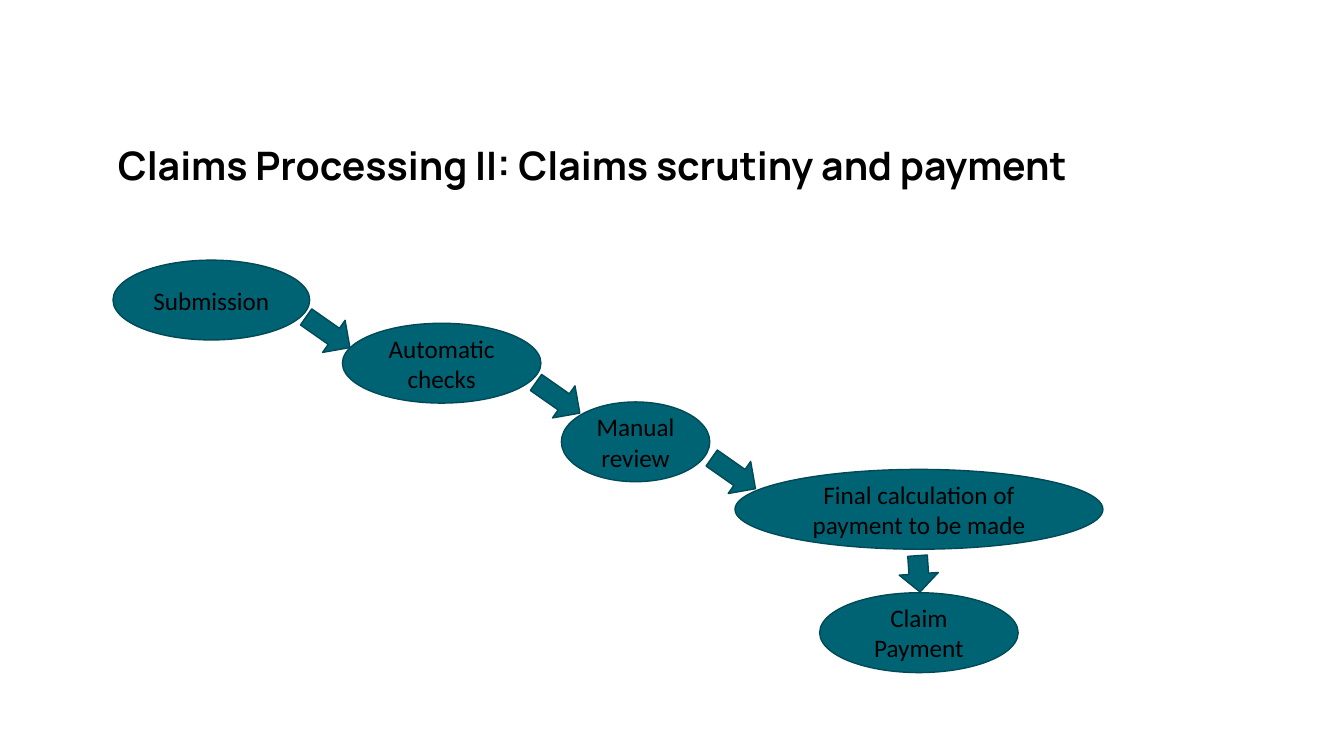
from dataclasses import dataclass

from pptx import Presentation
from pptx.dml.color import RGBColor as Rgb
from pptx.enum.shapes import MSO_SHAPE as Kind
from pptx.enum.text import MSO_ANCHOR as Anchor, MSO_AUTO_SIZE as Fit, PP_ALIGN as Align
from pptx.util import Pt


@dataclass(frozen=True)
class Theme:
    teal: Rgb = Rgb(0x00, 0x63, 0x74)
    edge: Rgb = Rgb(0x00, 0x49, 0x56)
    ink: Rgb = Rgb(0, 0, 0)
    head: int = 28
    body: int = 18


theme = Theme()
head_font = {"name": "Manrope", "size": Pt(theme.head), "bold": True}
body_font = {"name": "Calibri", "size": Pt(theme.body), "bold": False}


def write(shape, text, font, align, anchor):
    frame = shape.text_frame
    frame.text = text
    frame.word_wrap = True
    frame.auto_size = Fit.NONE
    frame.vertical_anchor = anchor
    para = frame.paragraphs[0]
    para.alignment = align
    for key, value in font.items():
        setattr(para.font, key, value)
    para.font.color.rgb = theme.ink
    return para


def draw(kind, left, top, width, height):
    shape = slide.shapes.add_shape(kind, Pt(left), Pt(top), Pt(width), Pt(height))
    shape.shadow.inherit = False
    shape.fill.solid()
    shape.fill.fore_color.rgb = theme.teal
    shape.line.color.rgb = theme.edge
    shape.line.width = Pt(1)
    return shape


deck = Presentation()
deck.slide_width, deck.slide_height = Pt(960), Pt(540)
slide = deck.slides.add_slide(deck.slide_layouts[5])

title = slide.shapes.title
title.left, title.top, title.width, title.height = Pt(77), Pt(101), Pt(747), Pt(75.5)
line = write(title, "Claims Processing II: Claims scrutiny and payment",
             head_font, Align.LEFT, Anchor.TOP)
line.line_spacing = 0.9

steps = [  # text, left, top, width
    ("Submission", 80.7, 185.8, 140.5),
    ("Automatic checks", 244.6, 230.9, 141.8),
    ("Manual review", 401, 287.1, 106),
    ("Final calculation of payment to be made", 525, 335.3, 262.8),
    ("Claim Payment", 585.5, 423.4, 141.8),
]
for text, left, top, width in steps:
    oval = draw(Kind.OVAL, left, top, width, 57)
    write(oval, text, body_font, Align.CENTER, Anchor.MIDDLE)

arrows = [  # left, top, height, turn
    (220.3, 218.2, 38.2, 305),
    (384.5, 265, 38.2, 305),
    (510, 319, 38.2, 305),
    (642.3, 396.9, 26, 356.1),
]
for left, top, height, turn in arrows:
    draw(Kind.DOWN_ARROW, left, top, 28, height).rotation = turn

deck.save("out.pptx")
